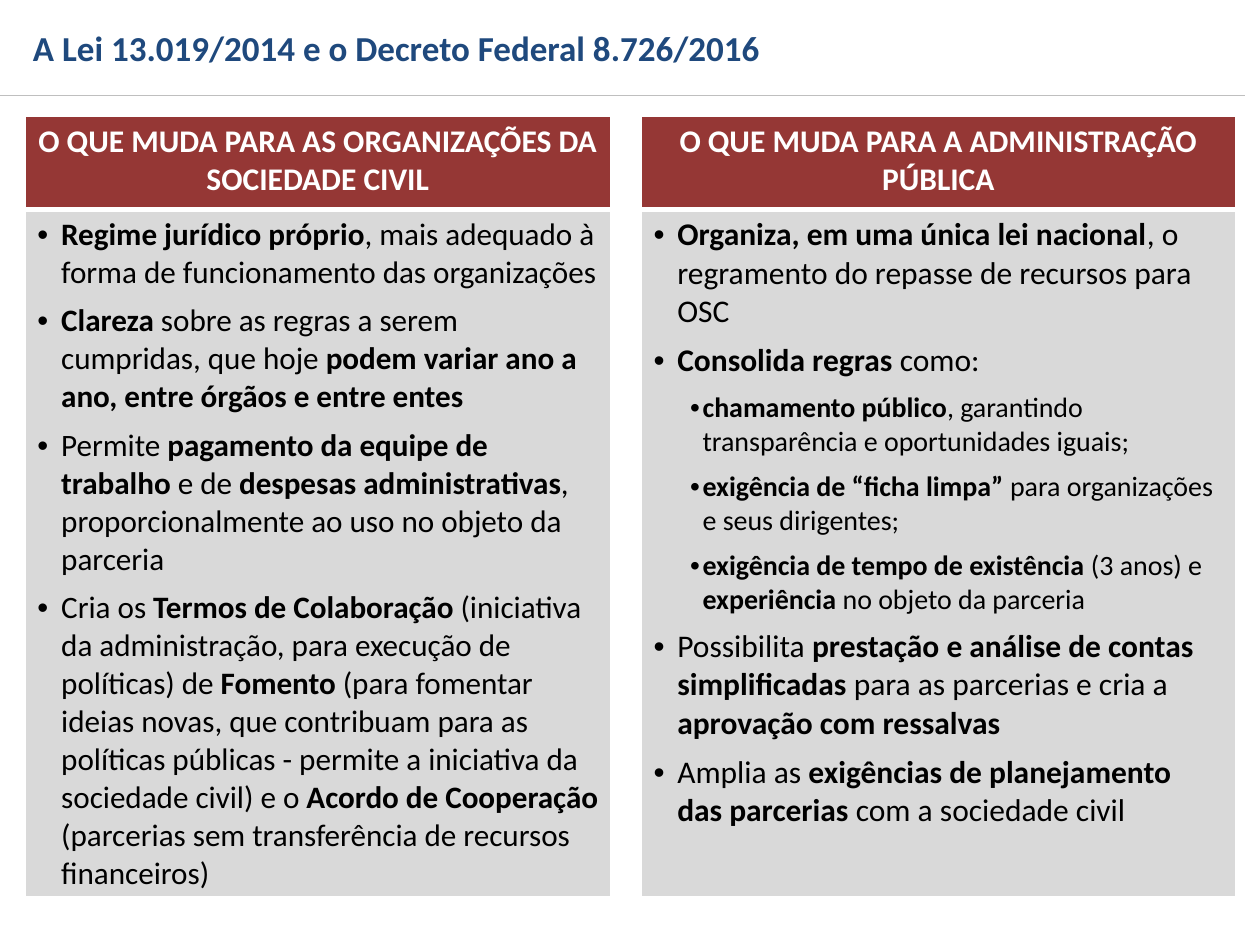
import pptx
import pptx.dml.color
import pptx.enum.shapes
import pptx.enum.text
import pptx.oxml
import pptx.oxml.ns
import pptx.util
import lxml.etree

Cm = pptx.util.Cm
Pt = pptx.util.Pt
RGBColor = pptx.dml.color.RGBColor
PP_ALIGN = pptx.enum.text.PP_ALIGN
qn = pptx.oxml.ns.qn

NAVY = RGBColor(0x1F, 0x49, 0x7D)
RED = RGBColor(0x95, 0x37, 0x35)
GRAY = RGBColor(0xD9, 0xD9, 0xD9)
RULE = RGBColor(0xBF, 0xBF, 0xBF)
WHITE = RGBColor(0xFF, 0xFF, 0xFF)
BLACK = RGBColor(0, 0, 0)
FONT = "Calibri"

HEADINGS = {
    0: "O QUE MUDA PARA AS ORGANIZAÇÕES DA SOCIEDADE CIVIL",
    2: "O QUE MUDA PARA A ADMINISTRAÇÃO PÚBLICA",
}
SIZES = {0: (17.8, 16), 2: (18, 16)}
INDENTS = [(Cm(0.48), Cm(-0.48)), (Cm(0.99), Cm(-0.25))]
ITEMS = {
    0: [
        (0, "*Regime jurídico próprio*, mais adequado à forma de funcionamento das organizações"),
        (0, "*Clareza* sobre as regras a serem cumpridas, que hoje "
            "*podem variar ano a ano, entre órgãos e entre entes*"),
        (0, "Permite *pagamento da equipe de trabalho* e de *despesas administrativas*, "
            "proporcionalmente ao uso no objeto da parceria"),
        (0, "Cria os *Termos de Colaboração *(iniciativa da administração, para execução de "
            "políticas) de *Fomento *(para fomentar ideias novas, que contribuam para as "
            "políticas públicas - permite a iniciativa da sociedade civil) e o "
            "*Acordo de Cooperação *(parcerias sem transferência de recursos financeiros)"),
    ],
    2: [
        (0, "*Organiza, em uma única lei nacional*, o regramento do repasse de recursos para OSC"),
        (0, "*Consolida regras* como:"),
        (1, "*chamamento público*, garantindo transparência e oportunidades iguais;"),
        (1, "*exigência de “ficha limpa” *para organizações e seus dirigentes;"),
        (1, "*exigência de tempo de existência *(3 anos) e *experiência* no objeto da parceria"),
        (0, "Possibilita *prestação e análise de contas simplificadas *para as parcerias "
            "e cria a *aprovação com ressalvas*"),
        (0, "Amplia as *exigências de planejamento das parcerias* com a sociedade civil"),
    ],
}


def format_run(run, size, color, bold):
    run.font.name = FONT
    run.font.size = Pt(size)
    run.font.color.rgb = color
    run.font.bold = bold


def set_borders(cell, bottom_width):
    properties = cell._tc.get_or_add_tcPr()
    for side in ("L", "R", "T", "B"):
        width = bottom_width if side == "B" else Pt(1)
        border = lxml.etree.SubElement(properties, qn(f"a:ln{side}"), w=str(int(width)))
        fill = lxml.etree.SubElement(border, qn("a:solidFill"))
        lxml.etree.SubElement(fill, qn("a:srgbClr"), val=str(WHITE))


presentation = pptx.Presentation()
presentation.slide_width = Cm(25.4)
presentation.slide_height = Cm(19.05)
slide = presentation.slides.add_slide(presentation.slide_layouts[5])

title = slide.shapes.title
title.left, title.top, title.width, title.height = Cm(0.41), Cm(0.41), Cm(15.29), Cm(1.11)
title.text_frame.text = "A Lei 13.019/2014 e o Decreto Federal 8.726/2016"
title.text_frame.word_wrap = False
title.text_frame.auto_size = pptx.enum.text.MSO_AUTO_SIZE.SHAPE_TO_FIT_TEXT
title.text_frame.vertical_anchor = pptx.enum.text.MSO_ANCHOR.TOP
title.text_frame.paragraphs[0].alignment = PP_ALIGN.LEFT
format_run(title.text_frame.paragraphs[0].runs[0], 20, NAVY, True)

rule = slide.shapes.add_connector(
    pptx.enum.shapes.MSO_CONNECTOR.STRAIGHT, Cm(-0.3), Cm(1.93), Cm(25.1), Cm(1.93))
rule.line.color.rgb = RULE
rule.line.width = Pt(0.75)
lxml.etree.SubElement(rule._element.spPr, qn("a:effectLst"))

table = slide.shapes.add_table(2, 3, Cm(0.5), Cm(2.34), Cm(24.41), Cm(15.74)).table
table.first_row = False
table.horz_banding = False
for column, width in zip(table.columns, (11.81, 0.61, 11.99)):
    column.width = Cm(width)
for row, height in zip(table.rows, (1.88, 13.86)):
    row.height = Cm(height)

for cell in table.iter_cells():
    set_borders(cell, Pt(1))
    cell.fill.background()

for column, heading in HEADINGS.items():
    header = table.cell(0, column)
    header.fill.solid()
    header.fill.fore_color.rgb = RED
    header._tc.tcPr.find(qn("a:lnB")).set("w", str(int(Pt(3))))
    header.text_frame.text = heading
    header.text_frame.paragraphs[0].alignment = PP_ALIGN.CENTER
    format_run(header.text_frame.paragraphs[0].runs[0], 18, WHITE, True)

    body = table.cell(1, column)
    body.fill.solid()
    body.fill.fore_color.rgb = GRAY
    body._tc.tcPr.find(qn("a:lnT")).set("w", str(int(Pt(3))))
    for index, (level, text) in enumerate(ITEMS[column]):
        frame = body.text_frame
        paragraph = frame.add_paragraph() if index else frame.paragraphs[0]
        paragraph.level = level
        paragraph.space_after = Pt(6)
        properties = paragraph._p.get_or_add_pPr()
        margin, indent = INDENTS[level]
        properties.set("marL", str(int(margin)))
        properties.set("indent", str(int(indent)))
        lxml.etree.SubElement(properties, qn("a:buFont"), typeface="Arial")
        lxml.etree.SubElement(properties, qn("a:buChar"), char="•")
        for part, piece in enumerate(text.split("*")):
            if piece:
                run = paragraph.add_run()
                run.text = piece
                format_run(run, SIZES[column][level], BLACK, part % 2 == 1)

presentation.save("out.pptx")
